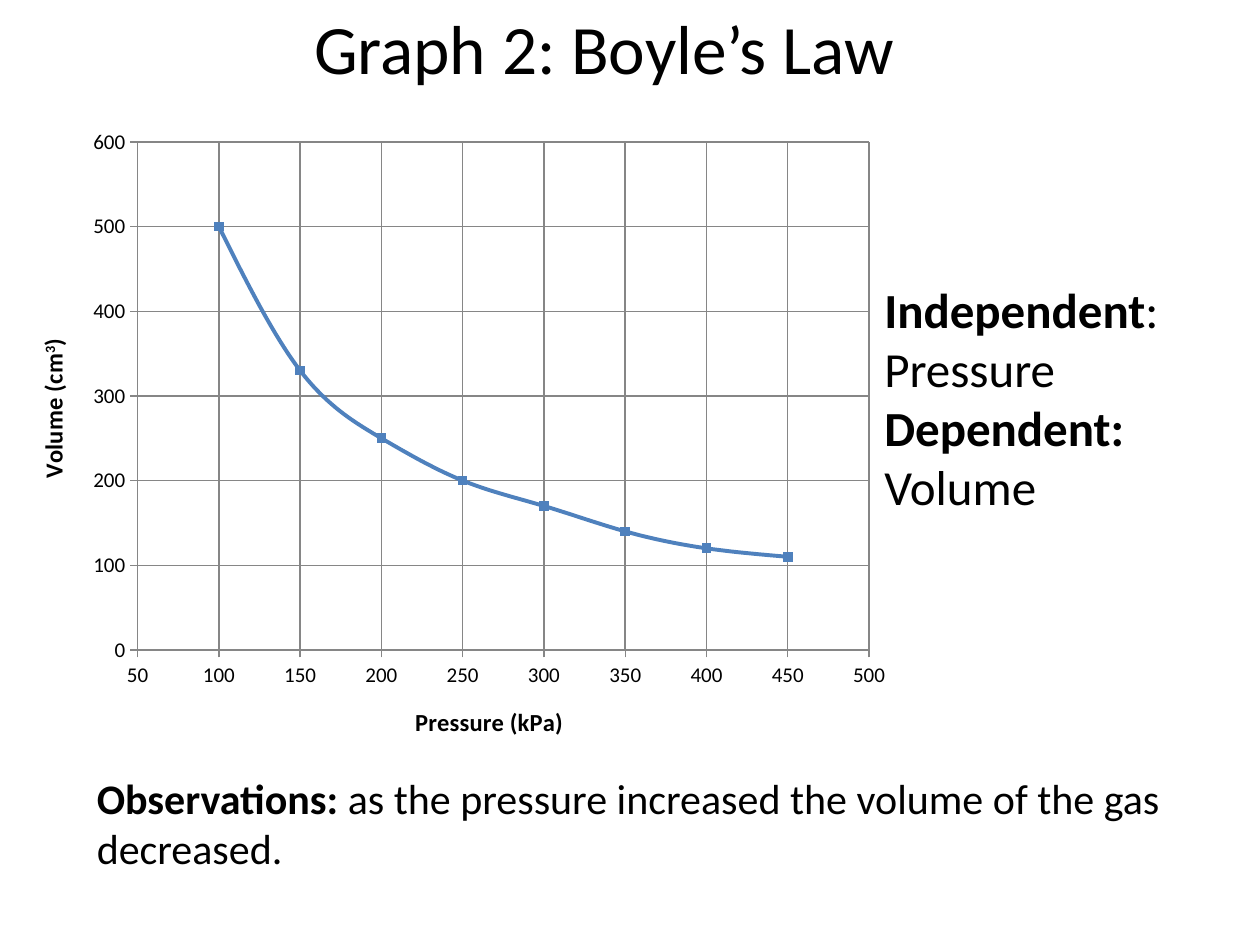
from lxml import etree
from pptx import Presentation
from pptx.chart.data import XyChartData
from pptx.dml.color import RGBColor
from pptx.enum.chart import XL_CHART_TYPE, XL_MARKER_STYLE, XL_TICK_MARK
from pptx.enum.text import MSO_ANCHOR, PP_ALIGN
from pptx.oxml.ns import qn
from pptx.util import Inches, Pt

SMOOTH = XL_CHART_TYPE.XY_SCATTER_SMOOTH
SQUARE = XL_MARKER_STYLE.SQUARE
OUTSIDE, NO_TICK = XL_TICK_MARK.OUTSIDE, XL_TICK_MARK.NONE
MIDDLE, CENTER = MSO_ANCHOR.MIDDLE, PP_ALIGN.CENTER
BLACK = RGBColor(0x00, 0x00, 0x00)
BLUE = RGBColor(0x4F, 0x81, 0xBD)
GRAY = RGBColor(0x86, 0x86, 0x86)
FONT = "Calibri"


def style(font, size, bold=False):
    font.name, font.size, font.bold = FONT, Pt(size), bold
    font.color.rgb = BLACK


def add_note(left, top, width, height, size, lines):
    """Add a text box; each line is a list of (text, bold) runs."""
    box = slide.shapes.add_textbox(Inches(left), Inches(top), Inches(width), Inches(height))
    frame = box.text_frame
    frame.word_wrap = True
    for i, line in enumerate(lines):
        para = frame.add_paragraph() if i else frame.paragraphs[0]
        for text, bold in line:
            run = para.add_run()
            run.text = text
            style(run.font, size, bold)


prs = Presentation()
prs.slide_width, prs.slide_height = Inches(10), Inches(7.5)
slide = prs.slides.add_slide(prs.slide_layouts[5])

# Title
title = slide.shapes.title
title.left, title.top = Inches(0.67), Inches(0)
title.width, title.height = Inches(8.25), Inches(0.75)
title.text_frame.text = "Graph 2: Boyle’s Law"
title.text_frame.vertical_anchor = MIDDLE
para = title.text_frame.paragraphs[0]
para.alignment = CENTER
style(para.runs[0].font, 39.6)

# Variables and observations
add_note(6.92, 2.17, 3.67, 1.99, 28, [
    [("Independent", True), (": Pressure", False)],
    [("Dependent:", True)],
    [("Volume", False)],
])
add_note(0.67, 6.08, 9, 1.21, 24, [
    [("Observations: ", True),
     ("as the pressure increased the volume of the gas decreased.", False)],
])

# Pressure and volume chart
data = XyChartData()
points = data.add_series("Series 1")
volumes = [500, 330, 250, 200, 170, 140, 120, 110]
for pressure, volume in zip(range(100, 500, 50), volumes):
    points.add_data_point(pressure, volume)
chart = slide.shapes.add_chart(
    SMOOTH, Inches(0.08), Inches(0.92), Inches(7.08), Inches(5.17), data).chart
style(chart.font, 10)
chart.has_legend = False
chart.has_title = False

series = chart.plots[0].series[0]
series.format.line.color.rgb = BLUE
series.format.line.width = Pt(2.25)
marker = series.marker
marker.style, marker.size = SQUARE, 5
marker.format.fill.solid()
marker.format.fill.fore_color.rgb = BLUE
marker.format.line.color.rgb = BLUE

# Scatter series have no smooth property, so the curve is set in the XML
curve = series._element.find(qn("c:smooth"))
if curve is None:
    curve = etree.SubElement(series._element, qn("c:smooth"))
curve.set("val", "1")

axes = [
    (chart.category_axis, 50, 500, 50, [("Pressure (kPa)", False)]),
    (chart.value_axis, 0, 600, 100, [("Volume (cm", False), ("3", True), (")", False)]),
]
for axis, low, high, step, parts in axes:
    axis.minimum_scale, axis.maximum_scale, axis.major_unit = low, high, step
    axis.major_tick_mark, axis.minor_tick_mark = OUTSIDE, NO_TICK
    axis.has_major_gridlines = True
    for line in (axis.format.line, axis.major_gridlines.format.line):
        line.color.rgb = GRAY
        line.width = Pt(0.75)
    style(axis.tick_labels.font, 12)
    axis.tick_labels.number_format = "General"
    axis.tick_labels.number_format_is_linked = False
    para = axis.axis_title.text_frame.paragraphs[0]
    for text, raised in parts:
        run = para.add_run()
        run.text = text
        style(run.font, 14, True)
        if raised:
            run.font._element.set("baseline", "30000")

# Fixed inner plot area, as fractions of the chart
area = chart._chartSpace.chart.plotArea
for old in area.findall(qn("c:layout")):
    area.remove(old)
layout = etree.Element(qn("c:layout"))
area.insert(0, layout)
manual = etree.SubElement(layout, qn("c:manualLayout"))
for tag, value in [("layoutTarget", "inner"), ("xMode", "edge"), ("yMode", "edge"),
                   ("x", "0.143"), ("y", "0.04"), ("w", "0.82"), ("h", "0.78")]:
    etree.SubElement(manual, qn("c:" + tag)).set("val", value)

prs.save("out.pptx")
